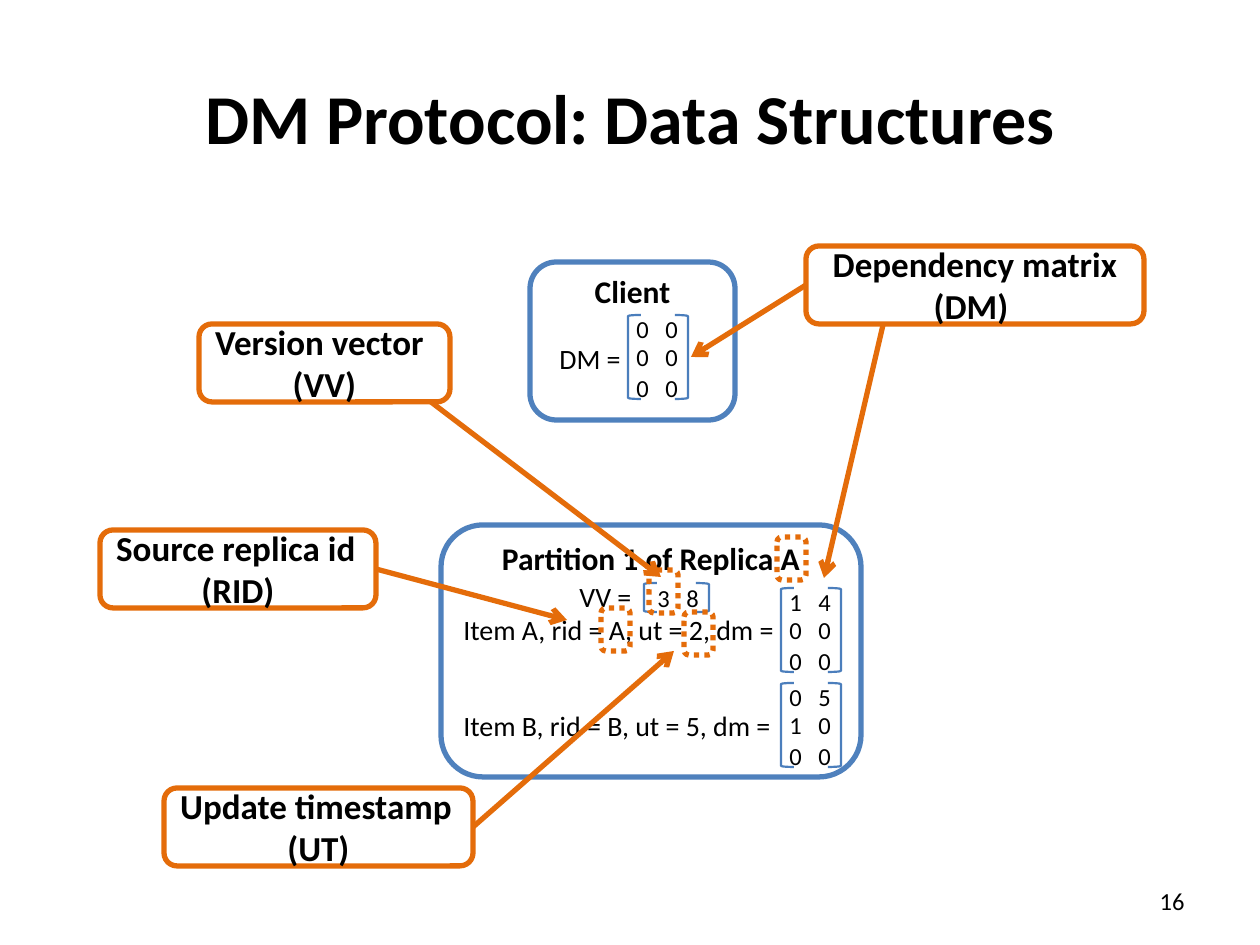
import dataclasses
import typing

import pptx
import pptx.dml.color
import pptx.enum.dml
import pptx.enum.shapes
import pptx.enum.text
import pptx.oxml.ns
import pptx.util
from lxml import etree

Shape = pptx.enum.shapes.MSO_SHAPE
Align = pptx.enum.text.PP_ALIGN
Anchor = pptx.enum.text.MSO_ANCHOR
RGB = pptx.dml.color.RGBColor


@dataclasses.dataclass(frozen=True)
class Theme:
    font: str = "Calibri"
    ink: RGB = RGB(0x00, 0x00, 0x00)
    paper: RGB = RGB(0xFF, 0xFF, 0xFF)
    panel: RGB = RGB(0x4F, 0x81, 0xBD)
    bracket: RGB = RGB(0x4B, 0x7E, 0xBC)
    accent: RGB = RGB(0xE4, 0x6C, 0x0A)
    title: int = 40
    callout: int = 20
    heading: int = 18
    label: int = 16
    digit: int = 14
    thick: float = 3
    thin: float = 1.25


class Rect(typing.NamedTuple):
    x: int
    y: int
    width: int
    height: int


class Panel(typing.NamedTuple):
    rect: Rect
    heading: str
    inset: int


class Label(typing.NamedTuple):
    text: str
    rect: Rect
    size: int


class Arrow(typing.NamedTuple):
    start: tuple[int, int]
    end: tuple[int, int]
    side: int | None = None


class Callout(typing.NamedTuple):
    rect: Rect
    lines: tuple[tuple[str, Align], ...]
    arrows: tuple[Arrow, ...]


class Matrix(typing.NamedTuple):
    x: int
    y: int
    rows: tuple[str, ...]


THEME = Theme()
PX_PER_INCH = 126
BRACKET_WIDTH = 13
BRACKET_GAP = 47
MATRIX_HEIGHT = 84
ROW_OFFSETS = (-7, 21, 52)
DIGIT_STEP = 29

PANELS = (
    Panel(Rect(441, 525, 420, 252), "Partition 1 of Replica A", 2),
    Panel(Rect(530, 262, 205, 158), "Client", 2),
)
VECTOR_BRACKET = Rect(644, 583, BRACKET_WIDTH, 29)
VECTOR_GAP = 52
ITEMS = (
    Label("3", Rect(645, 577, 33, 43), THEME.digit),
    Label("8", Rect(674, 577, 33, 43), THEME.digit),
    Label("Item A, rid = A, ut = 2, dm =", Rect(451, 606, 358, 47), THEME.label),
    Label("Item B, rid = B, ut = 5, dm =", Rect(451, 702, 343, 47), THEME.label),
    Label("VV =", Rect(567, 573, 83, 47), THEME.label),
    Label("DM =", Rect(547, 335, 94, 47), THEME.label),
)
CALLOUTS = (
    Callout(Rect(806, 246, 338, 78), (("Dependency matrix (DM) ", Align.CENTER),),
            (Arrow((806, 285), (691, 357), 1), Arrow((883, 325), (824, 578)))),
    Callout(Rect(199, 324, 251, 78), (("Version vector", Align.LEFT), ("(VV)", Align.CENTER)),
            (Arrow((431, 402), (661, 577)),)),
    Callout(Rect(164, 788, 309, 78), (("Update timestamp", Align.LEFT), ("(UT)", Align.CENTER)),
            (Arrow((473, 827), (674, 651), 3),)),
    Callout(Rect(100, 530, 276, 78), (("Source replica id", Align.LEFT), ("(RID)", Align.CENTER)),
            (Arrow((376, 569), (567, 620), 3),)),
)
MATRICES = (
    Matrix(628, 315, ("0\t0", "0\t0", "0\t0")),
    Matrix(781, 588, ("1\t4", "0\t0", "0\t0")),
    Matrix(781, 683, ("0\t5", "1\t0", "0\t0")),
)
HIGHLIGHTS = ((601, 608), (777, 537), (649, 570), (684, 612))


def px(value: int) -> pptx.util.Emu:
    return pptx.util.Emu(round(value * 914400 / PX_PER_INCH))


def scaled(rect: Rect) -> list[pptx.util.Emu]:
    return [px(value) for value in rect]


def write(para, text: str, size: int, bold: bool = False, align: Align = Align.LEFT) -> None:
    para.alignment = align
    span = para.add_run()
    span.text = text
    span.font.name = THEME.font
    span.font.size = pptx.util.Pt(size)
    span.font.bold = bold
    span.font.color.rgb = THEME.ink


def draw_outline(shapes, kind: Shape, rect: Rect, color: RGB, weight: float, filled: bool = False):
    box = shapes.add_shape(kind, *scaled(rect))
    box.shadow.inherit = False
    if filled:
        box.fill.solid()
        box.fill.fore_color.rgb = THEME.paper
    else:
        box.fill.background()
    box.line.color.rgb = color
    box.line.width = pptx.util.Pt(weight)
    return box


def draw_panel(page, panel: Panel) -> None:
    box = draw_outline(page.shapes, Shape.ROUNDED_RECTANGLE, panel.rect, THEME.panel, THEME.thick, True)
    box.text_frame.vertical_anchor = Anchor.TOP
    box.text_frame.margin_top = px(panel.inset)
    write(box.text_frame.paragraphs[0], panel.heading, THEME.heading, True, Align.CENTER)


def draw_brackets(shapes, left: Rect, gap: int) -> None:
    right = left._replace(x=left.x + gap)
    for kind, rect in ((Shape.LEFT_BRACKET, left), (Shape.RIGHT_BRACKET, right)):
        draw_outline(shapes, kind, rect, THEME.bracket, THEME.thin)


def draw_label(shapes, label: Label):
    box = shapes.add_textbox(*scaled(label.rect))
    box.text_frame.word_wrap = True
    box.text_frame.auto_size = pptx.enum.text.MSO_AUTO_SIZE.SHAPE_TO_FIT_TEXT
    write(box.text_frame.paragraphs[0], label.text, label.size)
    return box


def draw_matrix(page, matrix: Matrix) -> None:
    shapes = page.shapes.add_group_shape().shapes
    draw_brackets(shapes, Rect(matrix.x, matrix.y, BRACKET_WIDTH, MATRIX_HEIGHT), BRACKET_GAP)
    for text, offset in zip(matrix.rows, ROW_OFFSETS):
        rect = Rect(matrix.x - 4, matrix.y + offset, 85, 43)
        box = draw_label(shapes, Label(text, rect, THEME.digit))
        properties = box.text_frame.paragraphs[0]._p.get_or_add_pPr()
        stops = etree.SubElement(properties, pptx.oxml.ns.qn("a:tabLst"))
        etree.SubElement(stops, pptx.oxml.ns.qn("a:tab"), pos=str(px(DIGIT_STEP)), algn="l")


def draw_arrow(page, arrow: Arrow, source) -> None:
    ends = [px(value) for value in (*arrow.start, *arrow.end)]
    line = page.shapes.add_connector(pptx.enum.shapes.MSO_CONNECTOR.STRAIGHT, *ends)
    if arrow.side is not None:
        line.begin_connect(source, arrow.side)
    line.line.color.rgb = THEME.accent
    line.line.width = pptx.util.Pt(THEME.thick)
    etree.SubElement(line.get_or_add_ln(), pptx.oxml.ns.qn("a:tailEnd"), type="arrow")
    etree.SubElement(line._element.spPr, pptx.oxml.ns.qn("a:effectLst"))


def draw_callout(page, callout: Callout) -> None:
    box = draw_outline(page.shapes, Shape.ROUNDED_RECTANGLE, callout.rect, THEME.accent, THEME.thick, True)
    frame = box.text_frame
    frame.vertical_anchor = Anchor.MIDDLE
    for index, (text, align) in enumerate(callout.lines):
        para = frame.add_paragraph() if index else frame.paragraphs[0]
        write(para, text, THEME.callout, True, align)
    for arrow in callout.arrows:
        draw_arrow(page, arrow, box)


def main() -> None:
    """Build the slide that explains the data structures of the DM protocol."""
    deck = pptx.Presentation()
    deck.slide_width, deck.slide_height = px(1260), px(945)
    page = deck.slides.add_slide(deck.slide_layouts[5])
    title = page.shapes.title
    title.left, title.top, title.width, title.height = scaled(Rect(63, 38, 1134, 158))
    title.text_frame.vertical_anchor = Anchor.MIDDLE
    write(title.text_frame.paragraphs[0], "DM Protocol: Data Structures", THEME.title, True, Align.CENTER)
    for panel in PANELS:
        draw_panel(page, panel)
    draw_brackets(page.shapes, VECTOR_BRACKET, VECTOR_GAP)
    for label in ITEMS:
        draw_label(page.shapes, label)
    for callout in CALLOUTS:
        draw_callout(page, callout)
    number = page.shapes.add_textbox(*scaled(Rect(903, 876, 294, 50)))
    number.text_frame.word_wrap = True
    number.text_frame.vertical_anchor = Anchor.MIDDLE
    write(number.text_frame.paragraphs[0], "16", THEME.digit, align=Align.RIGHT)
    for matrix in MATRICES:
        draw_matrix(page, matrix)
    for x, y in HIGHLIGHTS:
        box = draw_outline(page.shapes, Shape.ROUNDED_RECTANGLE, Rect(x, y, 29, 43), THEME.accent, THEME.thick)
        box.line.dash_style = pptx.enum.dml.MSO_LINE.ROUND_DOT
    deck.save("out.pptx")


if __name__ == "__main__":
    main()
